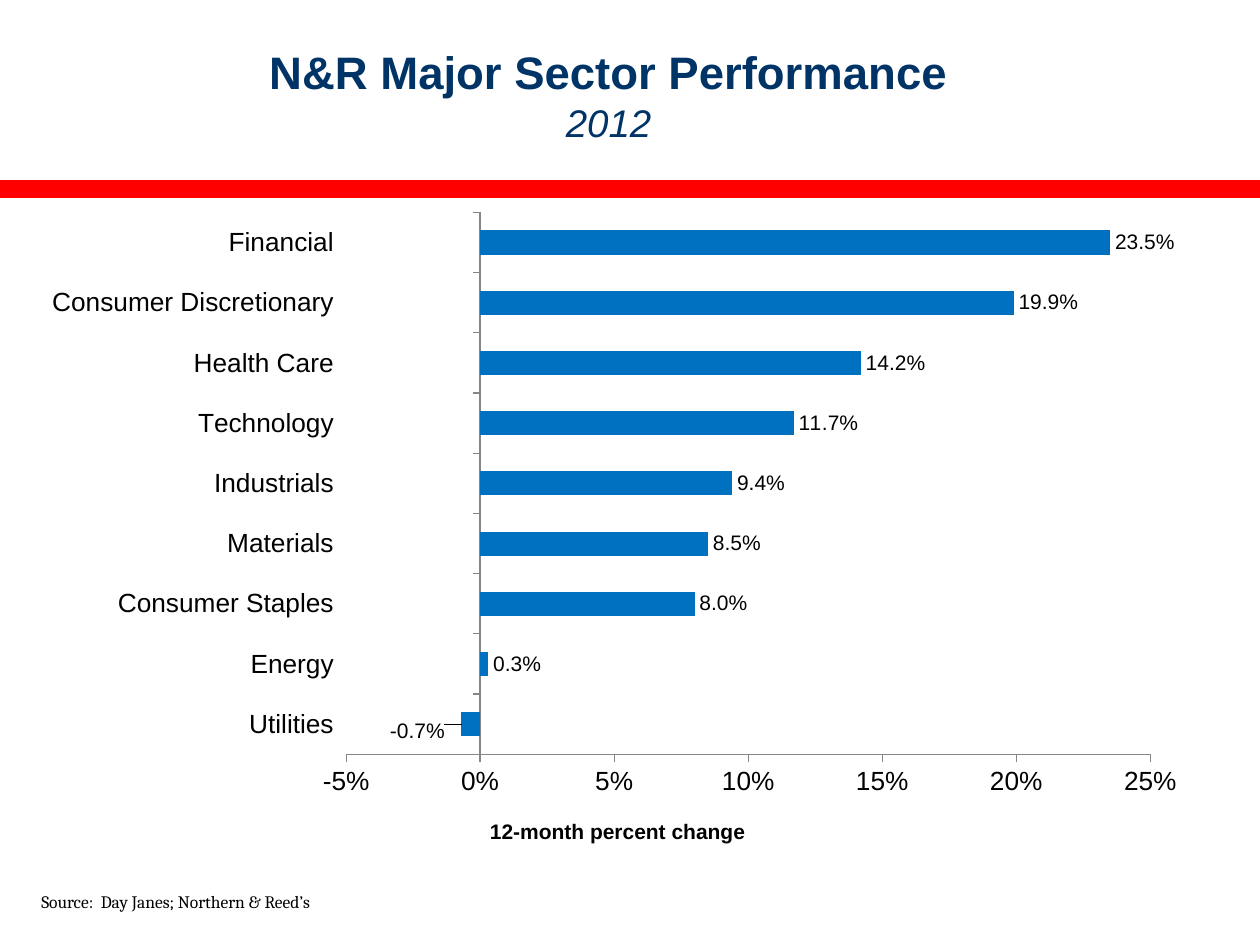
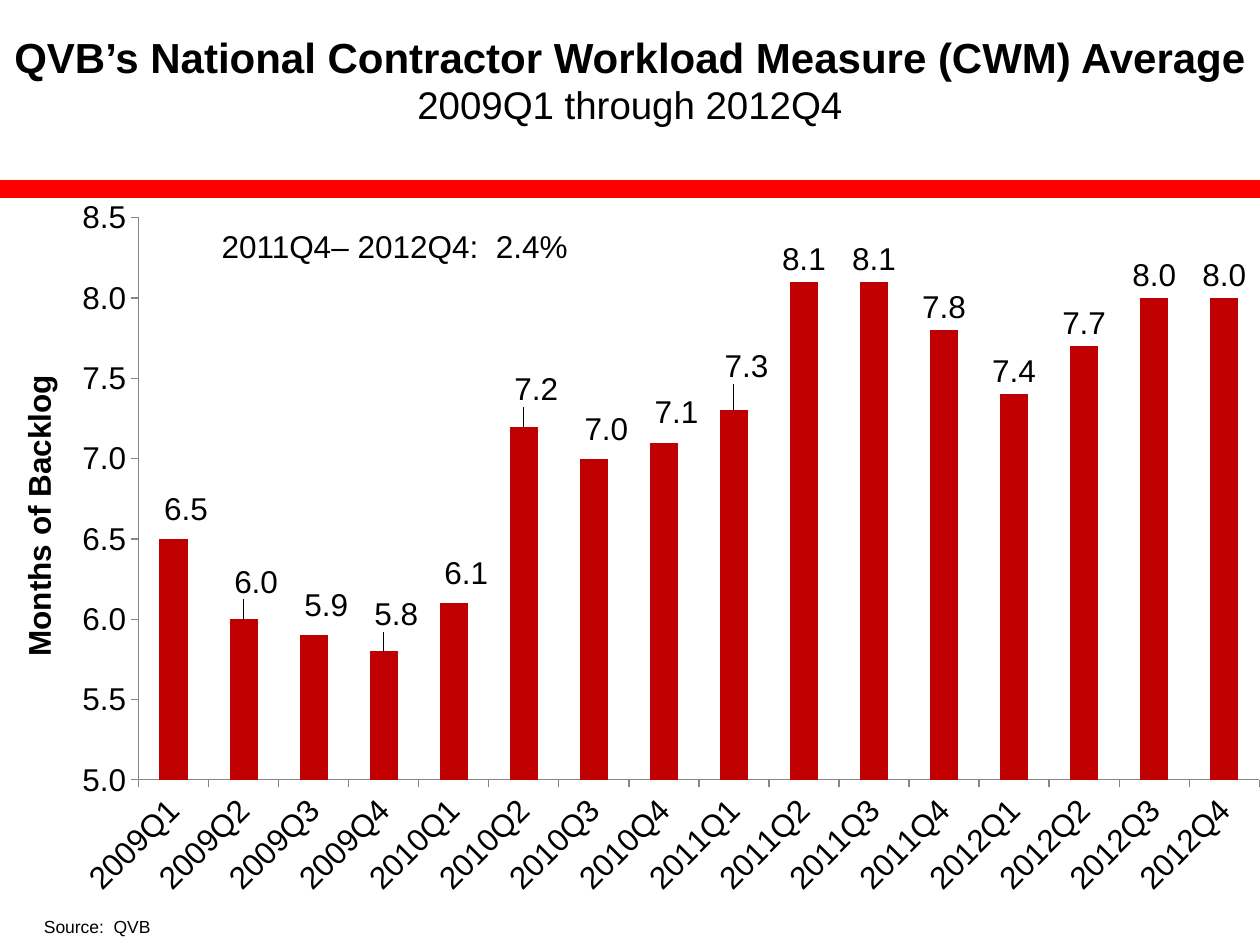
from lxml import etree
from pptx import Presentation
from pptx.chart.data import CategoryChartData
from pptx.dml.color import RGBColor
from pptx.enum.chart import XL_CHART_TYPE as ChartType
from pptx.enum.chart import XL_LABEL_POSITION as LabelPosition
from pptx.enum.chart import XL_TICK_LABEL_POSITION as TickLabelPosition
from pptx.enum.chart import XL_TICK_MARK as TickMark
from pptx.enum.shapes import MSO_CONNECTOR as Connector
from pptx.enum.text import MSO_ANCHOR as Anchor
from pptx.enum.text import MSO_AUTO_SIZE as AutoSize
from pptx.enum.text import PP_ALIGN as Align
from pptx.oxml.ns import qn
from pptx.util import Inches, Pt

NAVY = RGBColor(0x00, 0x33, 0x66)
BLACK = RGBColor(0x00, 0x00, 0x00)
RED = RGBColor(0xFF, 0x00, 0x00)
BLUE = RGBColor(0x00, 0x70, 0xC0)
DARK_RED = RGBColor(0xC0, 0x00, 0x00)
AXIS_GREY = RGBColor(0x86, 0x86, 0x86)
FONT = "Arial"
TITLE_ONLY = 5
BAND_TOP = 1.5
CHART_2012 = "http://schemas.microsoft.com/office/drawing/2012/chart"
LABEL_EXTENSION = "{CE6537A1-D6FC-4f65-9D91-7224C49458BB}"

SECTORS = [
    ("Utilities", -0.007),
    ("Energy", 0.003),
    ("Consumer Staples", 0.08),
    ("Materials", 0.085),
    ("Industrials", 0.094),
    ("Technology", 0.117),
    ("Health Care", 0.142),
    ("Consumer Discretionary", 0.199),
    ("Financial", 0.235),
]
QUARTERS = [f"{year}Q{quarter}" for year in range(2009, 2013) for quarter in range(1, 5)]
BACKLOG = [6.5, 6.0, 5.9, 5.8, 6.1, 7.2, 7.0, 7.1,
           7.3, 8.1, 8.1, 7.8, 7.4, 7.7, 8.0, 8.0]
BACKLOG_LABEL_RISES = [0.01, 0.02, 0.01, 0.02, 0.01, 0.02, 0.01, 0.01, 0.03]

# Boxes are left, top, width, height in inches; chart layouts are fractions of the chart.
SLIDES = [
    {
        "title": [
            ("N&R Major Sector Performance", {"size": 26, "bold": True}),
            ("2012", {"size": 22, "italic": True}),
        ],
        "title_color": NAVY,
        "title_box": (0.58, 0.25, 8.5, 1),
        "chart": {
            "kind": ChartType.BAR_CLUSTERED,
            "box": (0.25, 1.58, 9.25, 5.31),
            "points": SECTORS,
            "color": BLUE,
            "scale": (-0.05, 0.25, 0.05),
            "axis_format": "0%",
            "label_format": "0.0%",
            "axis_size": 15,
            "label_size": 12,
            "axis_title": "12-month percent change",
            "axis_title_size": 12,
            "axis_title_at": (0.39, 0.92),
            "plot": (0.27, 0.02, 0.69, 0.81),
            "label_shifts": [(-0.01, 0.01)],
        },
        "texts": [
            ("Source:  Day Janes; Northern & Reed’s", (0.23, 7.02, 6, 0.27),
             {"size": 10, "font": "Cambria"}),
        ],
    },
    {
        "title": [
            ("QVB’s National Contractor Workload Measure (CWM) Average",
             {"size": 24, "bold": True}),
            ("2009Q1 through 2012Q4", {"size": 22}),
        ],
        "title_color": BLACK,
        "title_box": (0, 0.17, 10, 0.92),
        "chart": {
            "kind": ChartType.COLUMN_CLUSTERED,
            "box": (0, 1.5, 10, 5.72),
            "points": list(zip(QUARTERS, BACKLOG)),
            "color": DARK_RED,
            "scale": (5, 8.5, 0.5),
            "axis_format": "#,##0.0",
            "label_format": "#,##0.0",
            "axis_size": 18,
            "label_size": 18,
            "axis_title": "Months of Backlog",
            "axis_title_size": 18,
            "axis_title_at": (0.01, 0.25),
            "plot": (0.11, 0.04, 0.89, 0.78),
            "label_shifts": [(0.01, -rise) for rise in BACKLOG_LABEL_RISES],
        },
        "texts": [
            ("Source:  QVB", (0.25, 7.22, 1.05, 0.27), {"size": 10, "wrap": False}),
            ("2011Q4– 2012Q4:  2.4%", (1.66, 1.75, 3.92, 0.41), {"size": 18}),
        ],
    },
]


def inches(box):
    return [Inches(length) for length in box]


def format_font(font, size, color=BLACK, bold=False, italic=False, name=FONT):
    font.name, font.size = name, Pt(size)
    font.bold, font.italic = bold, italic
    font.color.rgb = color


def add_text(slide, text, box, size, font=FONT, wrap=True):
    frame = slide.shapes.add_textbox(*inches(box)).text_frame
    frame.word_wrap = wrap
    run = frame.paragraphs[0].add_run()
    run.text = text
    format_font(run.font, size, name=font)


def fill_title(slide, lines, box, color):
    title = slide.shapes.title
    title.left, title.top, title.width, title.height = inches(box)
    frame = title.text_frame
    frame.auto_size, frame.vertical_anchor = AutoSize.NONE, Anchor.MIDDLE
    paragraph = frame.paragraphs[0]
    paragraph.alignment = Align.CENTER
    for number, (text, style) in enumerate(lines):
        if number:
            paragraph.add_line_break()
        run = paragraph.add_run()
        run.text = text
        format_font(run.font, color=color, **style)


def add_band(slide):
    top = Inches(BAND_TOP)
    band = slide.shapes.add_connector(Connector.STRAIGHT, 0, top, Inches(10), top)
    band.line.color.rgb, band.line.width = RED, Pt(10)
    etree.SubElement(band.element.spPr, qn("a:effectLst"))


def set_layout(parent, index, **values):
    """Give a chart part a manual layout, as child number index of its element."""
    for old in parent.findall(qn("c:layout")):
        parent.remove(old)
    layout = etree.Element(qn("c:layout"))
    manual = etree.SubElement(layout, qn("c:manualLayout"))
    for name, value in values.items():
        etree.SubElement(manual, qn(f"c:{name}")).set("val", str(value))
    parent.insert(index, layout)


def style_axis(axis, size):
    axis.has_major_gridlines = False
    axis.major_tick_mark, axis.minor_tick_mark = TickMark.OUTSIDE, TickMark.NONE
    axis.format.line.color.rgb = AXIS_GREY
    axis.format.line.width = Pt(0.75)
    format_font(axis.tick_labels.font, size)


def style_value_axis(axis, spec):
    style_axis(axis, spec["axis_size"])
    axis.minimum_scale, axis.maximum_scale, axis.major_unit = spec["scale"]
    axis.tick_labels.number_format = spec["axis_format"]
    axis.tick_labels.number_format_is_linked = False
    run = axis.axis_title.text_frame.paragraphs[0].add_run()
    run.text = spec["axis_title"]
    format_font(run.font, spec["axis_title_size"], bold=True)


def style_labels(series, spec):
    labels = series.data_labels
    labels.show_value = True
    labels.number_format = spec["label_format"]
    labels.number_format_is_linked = False
    shifted = [series.points[number].data_label
               for number in range(len(spec["label_shifts"]))]
    for label in [labels, *shifted]:
        label.position = LabelPosition.OUTSIDE_END
        format_font(label.font, spec["label_size"])


def hide_leader_lines(labels):
    extensions = etree.SubElement(labels, qn("c:extLst"))
    extension = etree.SubElement(extensions, qn("c:ext"), uri=LABEL_EXTENSION)
    etree.SubElement(extension, f"{{{CHART_2012}}}showLeaderLines",
                     nsmap={"c15": CHART_2012}, val="0")


def arrange_chart(root, spec):
    """Place plot, axis title and shifted labels, and turn upright texts."""
    x, y, width, height = spec["plot"]
    set_layout(root.xpath("c:chart/c:plotArea")[0], 0, layoutTarget="inner",
               xMode="edge", yMode="edge", x=x, y=y, w=width, h=height)
    title = root.xpath(".//c:valAx/c:title")[0]
    x, y = spec["axis_title_at"]
    set_layout(title, 1, xMode="edge", yMode="edge", x=x, y=y)
    for label, (x, y) in zip(root.xpath(".//c:dLbl"), spec["label_shifts"]):
        set_layout(label, 1, x=x, y=y)
    hide_leader_lines(root.xpath(".//c:ser/c:dLbls")[0])
    if spec["kind"] == ChartType.COLUMN_CLUSTERED:
        title.xpath(".//a:bodyPr")[0].set("rot", "-5400000")
        root.xpath(".//c:catAx/c:txPr/a:bodyPr")[0].set("rot", "-2700000")


def add_bar_chart(slide, spec):
    data = CategoryChartData(number_format=spec["label_format"])
    names, values = zip(*spec["points"])
    data.categories = names
    data.add_series("Series 1", values)
    chart = slide.shapes.add_chart(spec["kind"], *inches(spec["box"]), data).chart
    chart.has_legend = chart.has_title = False
    format_font(chart.font, 18)
    plot = chart.plots[0]
    plot.gap_width, plot.vary_by_categories = 150, False
    series = plot.series[0]
    series.invert_if_negative = False
    series.format.fill.solid()
    series.format.fill.fore_color.rgb = spec["color"]
    style_axis(chart.category_axis, spec["axis_size"])
    chart.category_axis.tick_label_position = TickLabelPosition.LOW
    style_value_axis(chart.value_axis, spec)
    style_labels(series, spec)
    arrange_chart(chart.element, spec)


def main():
    presentation = Presentation()
    presentation.slide_width, presentation.slide_height = Inches(10), Inches(7.5)
    for content in SLIDES:
        slide = presentation.slides.add_slide(presentation.slide_layouts[TITLE_ONLY])
        fill_title(slide, content["title"], content["title_box"], content["title_color"])
        add_bar_chart(slide, content["chart"])
        for text, box, style in content["texts"]:
            add_text(slide, text, box, **style)
        add_band(slide)
    presentation.save("out.pptx")


if __name__ == "__main__":
    main()
